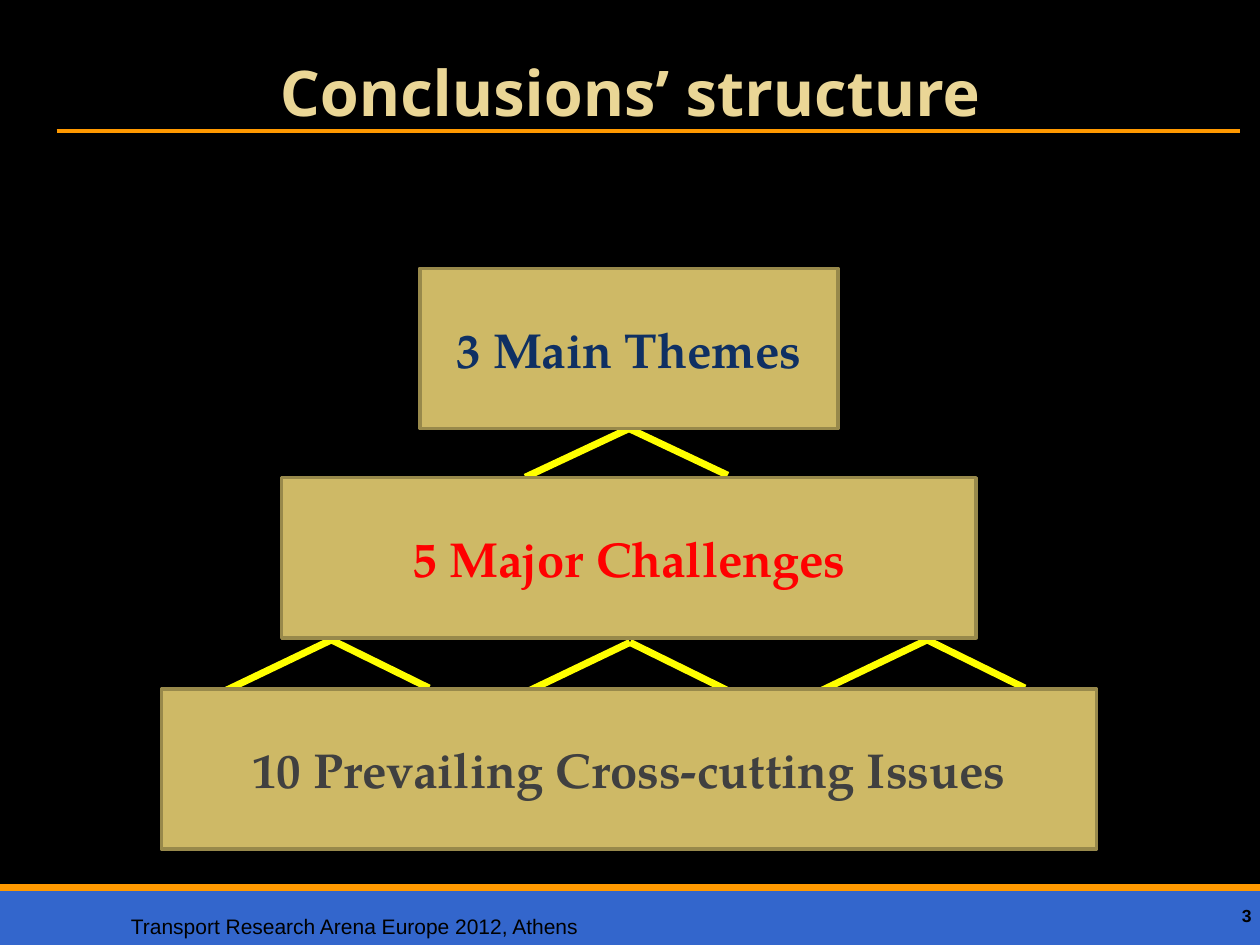
"""Build the slide on the structure of the conclusions."""
from lxml.etree import SubElement
from pptx import Presentation
from pptx.dml.color import RGBColor
from pptx.enum.shapes import MSO_CONNECTOR, MSO_SHAPE
from pptx.enum.text import MSO_ANCHOR, MSO_AUTO_SIZE, PP_ALIGN
from pptx.oxml.ns import qn
from pptx.util import Cm, Pt

BLACK = RGBColor(0x00, 0x00, 0x00)
ORANGE = RGBColor(0xFF, 0x99, 0x00)
BLUE = RGBColor(0x33, 0x66, 0xCC)
YELLOW = RGBColor(0xFF, 0xFF, 0x00)
CREAM = RGBColor(0xEA, 0xD6, 0x96)
GOLD = RGBColor(0xCE, 0xB9, 0x66)
BRONZE = RGBColor(0x98, 0x89, 0x4B)
NAVY = RGBColor(0x0F, 0x30, 0x63)
RED = RGBColor(0xFF, 0x00, 0x00)
GREY = RGBColor(0x40, 0x40, 0x40)

WIDE, HIGH = 25.4, 19.05
MID, TALL = 12.68, 3.23
TIERS = [
    ("3 Main Themes", 5.41, 8.43, NAVY),
    ("5 Major Challenges", 9.63, 14, RED),
    ("10 Prevailing Cross-cutting Issues", 13.89, 18.85, GREY),
]
PEAKS = [(12.7, 8.61), (6.68, 12.9), (12.7, 12.95), (18.69, 12.9)]
LEGS = [(-2.11, 1.01), (1.97, 0.97)]
BARS = [(17.91, 1.14, BLUE, None), (17.83, 0.13, ORANGE, ORANGE)]

HEAD = {"size": Pt(36), "name": "Noto Sans", "bold": True}
TIER = {"size": Pt(28), "name": "TeX Gyre Pagella", "bold": True}
FOOT = {"size": Pt(12), "name": "Arial", "bold": False}
PAGE = {"size": Pt(10), "name": "Arial", "bold": True}
TIGHT = dict.fromkeys(
    ("margin_left", "margin_top", "margin_right", "margin_bottom"), Cm(0.1))
NOTES = [
    ("3", (24.54, 18.11, 0.79, 0.76), PAGE, BLACK,
     {"word_wrap": False, "vertical_anchor": MSO_ANCHOR.MIDDLE, **TIGHT},
     {"alignment": PP_ALIGN.RIGHT, "line_spacing": 0.9}),
    ("Transport Research Arena Europe 2012, Athens",
     (2.39, 18.29, 14.22, 0.76), FOOT, BLACK,
     {"word_wrap": True, "auto_size": MSO_AUTO_SIZE.SHAPE_TO_FIT_TEXT}, {}),
    ("Conclusions’ structure", (1.27, 0.25, 22.86, 3.18), HEAD, CREAM,
     {"word_wrap": True, "vertical_anchor": MSO_ANCHOR.MIDDLE},
     {"alignment": PP_ALIGN.CENTER}),
]


def apply(item, form):
    for key, val in form.items():
        setattr(item, key, val)


def write(shape, text, font, color, frame, para):
    apply(shape.text_frame, frame)
    line = shape.text_frame.paragraphs[0]
    apply(line, para)
    run = line.add_run()
    run.text = text
    apply(run.font, font)
    run.font.color.rgb = color


def block(slide, spot, fill, edge, width):
    shape = slide.shapes.add_shape(MSO_SHAPE.RECTANGLE, *map(Cm, spot))
    shape.shadow.inherit = False
    shape.fill.solid()
    shape.fill.fore_color.rgb = fill
    if edge is None:
        shape.line.fill.background()
    else:
        shape.line.color.rgb = edge
        shape.line.width = Pt(width)
    return shape


def rule(slide, ends, color, width):
    line = slide.shapes.add_connector(MSO_CONNECTOR.STRAIGHT, *map(Cm, ends))
    line.line.color.rgb = color
    line.line.width = Pt(width)
    SubElement(line._element.spPr, qn("a:effectLst"))
    return line


def main():
    deck = Presentation()
    apply(deck, {"slide_width": Cm(WIDE), "slide_height": Cm(HIGH)})
    slide = deck.slides.add_slide(deck.slide_layouts[6])
    slide.background.fill.solid()
    slide.background.fill.fore_color.rgb = BLACK

    rule(slide, (1.14, 2.64, 24.99, 2.64), ORANGE, 2.25)
    for top, tall, fill, edge in BARS:
        block(slide, (0, top, WIDE, tall), fill, edge, 0.75)
    for text, spot, font, color, frame, para in NOTES:
        box = slide.shapes.add_textbox(*map(Cm, spot))
        write(box, text, font, color, frame, para)

    legs = [rule(slide, (x, y, x + dx, y + dy), YELLOW, 4)
            for x, y in PEAKS for dx, dy in LEGS]
    boxes = []
    for text, top, wide, color in TIERS:
        box = block(slide, (MID - wide / 2, top, wide, TALL), GOLD, BRONZE, 2)
        write(box, text, TIER, color,
              {"word_wrap": True, "vertical_anchor": MSO_ANCHOR.MIDDLE},
              {"alignment": PP_ALIGN.CENTER})
        boxes.append(box)
    for leg in legs[:len(LEGS)]:
        leg.begin_connect(boxes[0], 2)

    deck.save("out.pptx")


if __name__ == "__main__":
    main()
